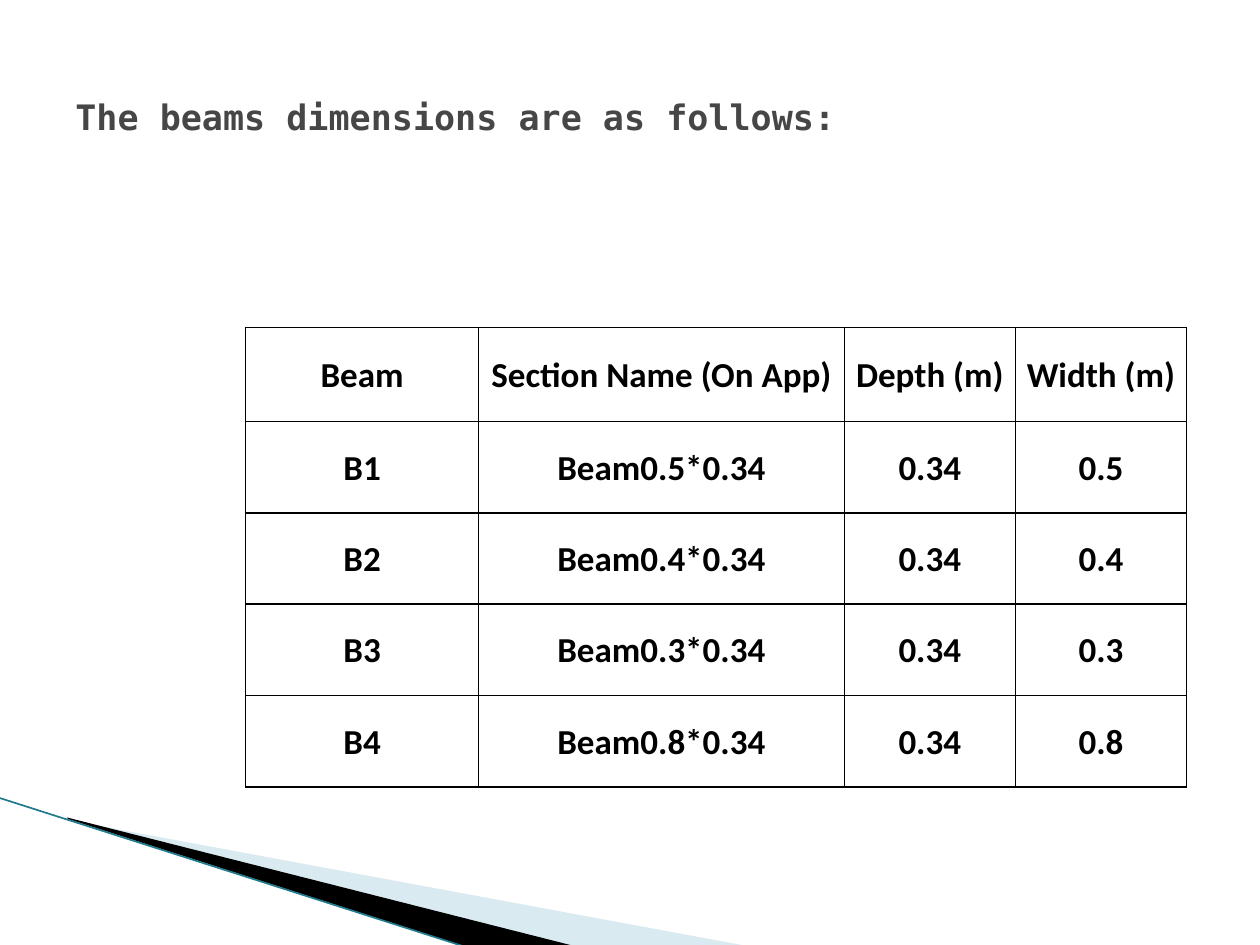
from lxml import etree
from pptx import Presentation
from pptx import util as u
from pptx.dml.color import RGBColor
from pptx.enum import shapes, text
from pptx.oxml.ns import qn

COLOURS = {"ink": "000000", "title": "464646", "pale": "A0CBDC", "edge": "1F7A8C"}
BEAM_WIDTHS = {"B1": "0.5", "B2": "0.4", "B3": "0.3", "B4": "0.8"}
DEPTH = "0.34"


class BeamSlide:
    """Holds the style and the current page, and draws each kind of element."""

    def __init__(self, deck):
        self.page = deck.slides.add_slide(deck.slide_layouts[6])
        self.size = u.Pt(20)

    def colour(self, name):
        return RGBColor.from_string(COLOURS[name])

    def add_words(self, frame, words, font, colour):
        para = frame.paragraphs[0]
        span = para.add_run()
        span.text = words
        span.font.name = font
        span.font.size = self.size
        span.font.bold = True
        span.font.color.rgb = self.colour(colour)
        return para

    def wedge(self, points, colour, opacity=100):
        corners = [(u.Cm(x), u.Cm(y)) for x, y in points]
        builder = self.page.shapes.build_freeform(*corners[0])
        builder.add_line_segments(corners[1:], close=True)
        shape = builder.convert_to_shape()
        shape.shadow.inherit = False
        shape.fill.solid()
        shape.fill.fore_color.rgb = self.colour(colour)
        shape.line.fill.background()
        if opacity < 100:
            tint = shape._element.spPr.find(".//" + qn("a:srgbClr"))
            etree.SubElement(tint, qn("a:alpha"), val=str(opacity * 1000))

    def line(self, start, end, colour, width):
        ends = [u.Cm(value) for value in (*start, *end)]
        line = self.page.shapes.add_connector(shapes.MSO_CONNECTOR.STRAIGHT, *ends)
        line.line.color.rgb = self.colour(colour)
        line.line.width = u.Pt(width)
        etree.SubElement(line._element.spPr, qn("a:effectLst"))

    def title(self, words, left, top, width, height):
        box = self.page.shapes.add_textbox(*map(u.Cm, (left, top, width, height)))
        frame = box.text_frame
        frame.word_wrap = True
        frame.vertical_anchor = text.MSO_ANCHOR.MIDDLE
        self.add_words(frame, words, "DejaVu Sans Mono", "title")

    def table(self, rows, left, top, widths, heights):
        area = map(u.Cm, (left, top, sum(widths), sum(heights)))
        table = self.page.shapes.add_table(len(rows), len(widths), *area).table
        for column, width in zip(table.columns, widths):
            column.width = u.Cm(width)
        for row, height, words in zip(table.rows, heights, rows):
            row.height = u.Cm(height)
            for cell, value in zip(row.cells, words):
                self.fill_cell(cell, value)

    def fill_cell(self, cell, value):
        cell.margin_left = cell.margin_right = u.Cm(0.18)
        cell.margin_top = cell.margin_bottom = 0
        cell.vertical_anchor = text.MSO_ANCHOR.MIDDLE
        para = self.add_words(cell.text_frame, value, "Calibri", "ink")
        para.alignment = text.PP_ALIGN.CENTER
        para.line_spacing = 1.05
        properties = cell._tc.get_or_add_tcPr()
        for side in ("lnL", "lnR", "lnT", "lnB"):
            border = etree.SubElement(properties, qn("a:" + side), w=str(u.Pt(1)))
            fill = etree.SubElement(border, qn("a:solidFill"))
            etree.SubElement(fill, qn("a:srgbClr"), val=COLOURS["ink"])
        cell.fill.background()


def main():
    deck = Presentation()
    deck.slide_width, deck.slide_height = u.Cm(25.4), u.Cm(19.05)
    slide = BeamSlide(deck)
    slide.wedge([(1.4, 16.54), (15.11, 19.08), (11.58, 19.08), (1.4, 16.51)], "pale", 40)
    slide.wedge([(1.35, 16.48), (11.61, 19.08), (9.45, 19.1), (1.37, 16.51)], "ink")
    slide.line((-0.03, 16.08), (9.42, 19.1), "edge", 0.95)
    slide.title("The beams dimensions are as follows:", 1.27, 0.76, 22.86, 3.18)
    rows = [("Beam", "Section Name (On App)", "Depth (m)", "Width (m)")]
    rows += [
        (beam, f"Beam{width}*{DEPTH}", DEPTH, width)
        for beam, width in BEAM_WIDTHS.items()
    ]
    heights = [1.9] + [1.84] * len(BEAM_WIDTHS)
    slide.table(rows, 4.95, 6.6, [4.7, 7.37, 3.45, 3.45], heights)
    deck.save("out.pptx")


if __name__ == "__main__":
    main()
